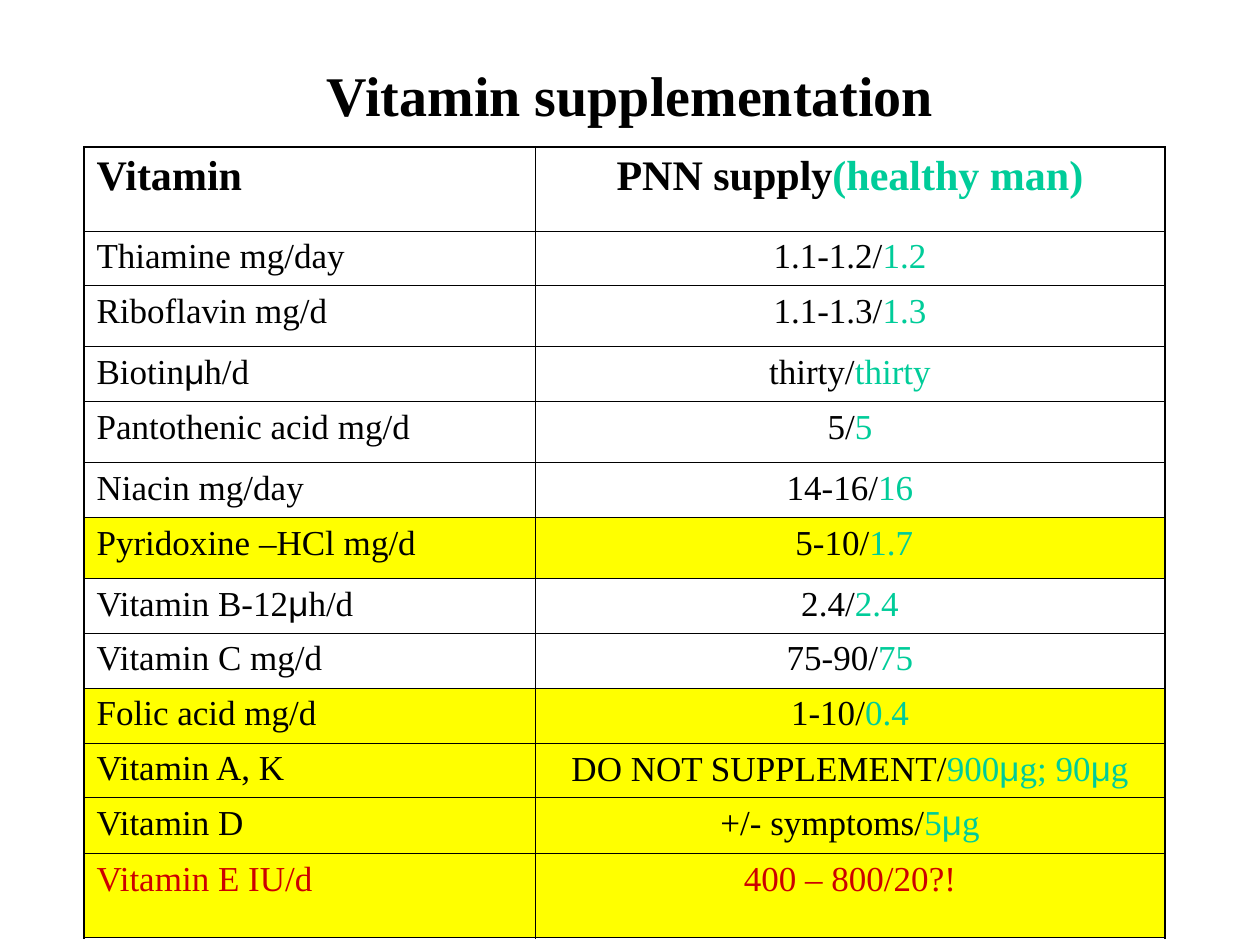
from itertools import groupby

from lxml import etree
from pptx import Presentation
from pptx import util as u
from pptx.dml.color import RGBColor
from pptx.enum import text as t
from pptx.oxml.ns import qn

PX = 914400 / 126
BLACK, GREEN, RED = "000000", "00CC99", "CC0000"
WHITE, YELLOW = "FFFFFF", "FFFF00"
THIN, THICK = 0.45, 1.08


def px(n):
    return u.Emu(round(n * PX))


def write(frame, text, size=20, color=BLACK, bold=False, align=t.PP_ALIGN.LEFT, before=0):
    """Append text to the frame's paragraph; the micro sign is set in Arial."""
    paragraph = frame.paragraphs[0]
    paragraph.alignment = align
    paragraph.space_before = u.Pt(before)
    for is_micro, letters in groupby(text, key=lambda letter: letter == "μ"):
        run = paragraph.add_run()
        run.text = "".join(letters)
        run.font.name = "Arial" if is_micro else "Times New Roman"
        run.font.size = u.Pt(size)
        run.font.bold = bold
        run.font.color.rgb = RGBColor.from_string(color)


prs = Presentation()
prs.slide_width, prs.slide_height = px(1260), px(945)
slide = prs.slides.add_slide(prs.slide_layouts[6])

# Title
title = slide.shapes.add_textbox(px(95), px(21), px(1071), px(147)).text_frame
title.word_wrap = True
title.vertical_anchor = t.MSO_ANCHOR.MIDDLE
write(title, "Vitamin supplementation", size=32, bold=True, align=t.PP_ALIGN.CENTER)

# Rows: height, vitamin, supply by PNN, need of a healthy man, fill
rows = [
    (84, "Vitamin", "PNN supply", "(healthy man)", WHITE),
    (54, "Thiamine mg/day", "1.1-1.2/", "1.2", WHITE),
    (61, "Riboflavin mg/d", "1.1-1.3/", "1.3", WHITE),
    (55, "Biotinμh/d", "thirty/", "thirty", WHITE),
    (61, "Pantothenic acid mg/d", "5/", "5", WHITE),
    (55, "Niacin mg/day", "14-16/", "16", WHITE),
    (61, "Pyridoxine –HCl mg/d", " 5-10/", "1.7", YELLOW),
    (54, "Vitamin B-12μh/d", "2.4/", "2.4", WHITE),
    (55, "Vitamin C mg/d", "75-90/", "75", WHITE),
    (55, "Folic acid mg/d", "1-10/", "0.4", YELLOW),
    (54, "Vitamin A, K", "DO NOT SUPPLEMENT/", "900μg; 90μg", YELLOW),
    (56, "Vitamin D", "+/- symptoms/", "5μg", YELLOW),
    (84, "Vitamin E IU/d", "400 – 800/20?!", "", YELLOW),
]
column_widths = [451, 630]
last = len(rows) - 1

# Table
table = slide.shapes.add_table(
    len(rows), 2, px(84), px(147), px(sum(column_widths)), px(sum(row[0] for row in rows))
).table
table.first_row = table.horz_banding = False
for column, width in zip(table.columns, column_widths):
    column.width = px(width)

for r, (height, vitamin, supply, need, fill) in enumerate(rows):
    table.rows[r].height = px(height)
    style = {"size": 20, "before": 5}
    if r == 0:
        style = {"size": 24, "before": 6, "bold": True}
    color = RED if r == last else BLACK
    name_cell, supply_cell = table.cell(r, 0), table.cell(r, 1)
    write(name_cell.text_frame, vitamin, color=color, **style)
    for part, part_color in ((supply, color), (need, GREEN)):
        write(supply_cell.text_frame, part, color=part_color, align=t.PP_ALIGN.CENTER, **style)

    # Fill and borders: thick around the table, thin inside
    for c, cell in enumerate((name_cell, supply_cell)):
        cell.fill.solid()
        cell.fill.fore_color.rgb = RGBColor.from_string(fill)
        properties = cell._tc.get_or_add_tcPr()
        outer_sides = {"lnL": c == 0, "lnR": c == 1, "lnT": r == 0, "lnB": r == last}
        for position, (side, outer) in enumerate(outer_sides.items()):
            line = etree.Element(qn(f"a:{side}"), w=str(u.Pt(THICK if outer else THIN)))
            solid = etree.SubElement(line, qn("a:solidFill"))
            etree.SubElement(solid, qn("a:srgbClr"), val=BLACK)
            properties.insert(position, line)

prs.save("out.pptx")
